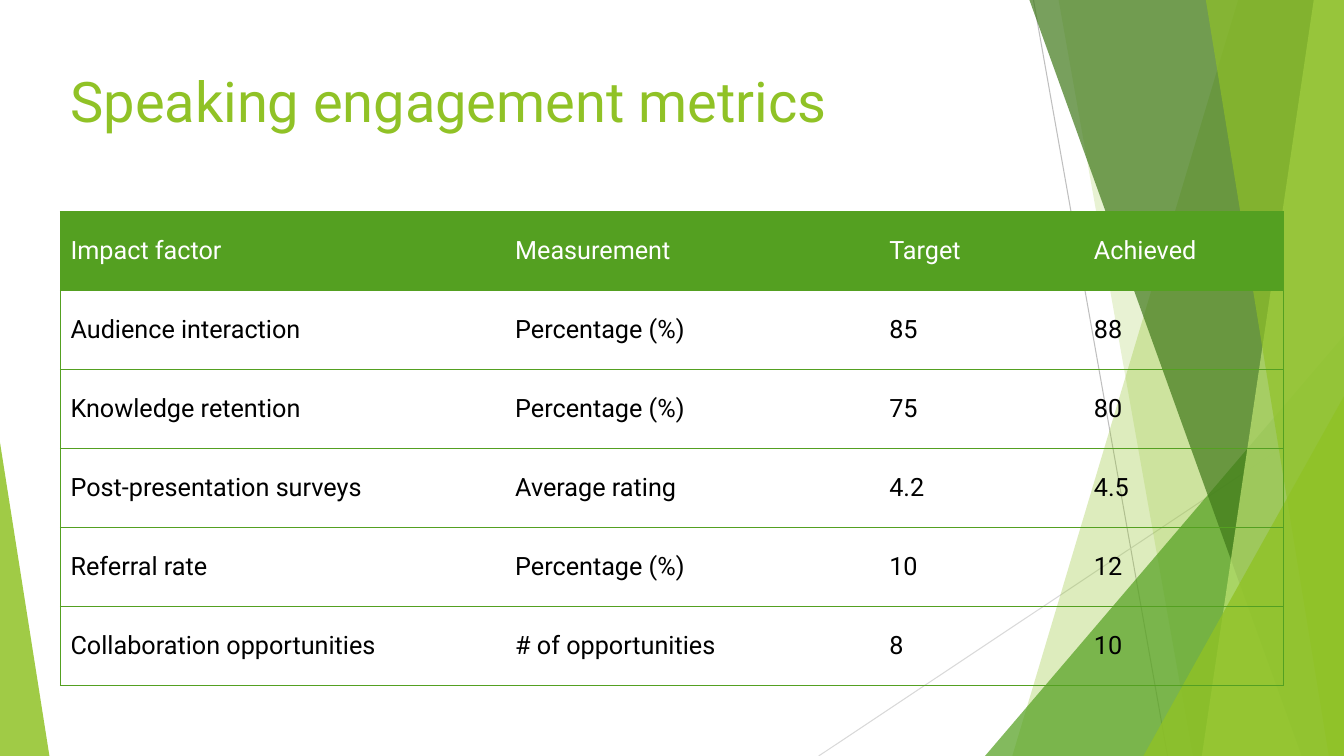
from lxml import etree
from pptx import Presentation
from pptx.dml.color import RGBColor
from pptx.enum.shapes import MSO_CONNECTOR, MSO_SHAPE
from pptx.enum.text import MSO_ANCHOR
from pptx.oxml.ns import qn
from pptx.util import Inches, Pt

STRAIGHT = MSO_CONNECTOR.STRAIGHT
TRIANGLE = MSO_SHAPE.ISOSCELES_TRIANGLE
TOP = MSO_ANCHOR.TOP
MIDDLE = MSO_ANCHOR.MIDDLE

LIME = RGBColor(0x90, 0xC2, 0x26)
PALE_LIME = RGBColor(0xC0, 0xE4, 0x74)
GREEN = RGBColor(0x54, 0xA0, 0x21)
DARK_GREEN = RGBColor(0x3F, 0x78, 0x19)
GRAY = RGBColor(0xBF, 0xBF, 0xBF)
LIGHT_GRAY = RGBColor(0xD9, 0xD9, 0xD9)
WHITE = RGBColor(0xFF, 0xFF, 0xFF)
BLACK = RGBColor(0, 0, 0)

FONT = "Roboto"
WIDTH, HEIGHT = 13.33, 7.5
COLUMN_WIDTHS = [4.41, 3.71, 2.03, 1.98]
ROW_HEIGHT = 4.7 / 6
METRICS = [
    ("Impact factor", "Measurement", "Target", "Achieved"),
    ("Audience interaction", "Percentage (%)", "85", "88"),
    ("Knowledge retention", "Percentage (%)", "75", "80"),
    ("Post-presentation surveys", "Average rating", "4.2", "4.5"),
    ("Referral rate", "Percentage (%)", "10", "12"),
    ("Collaboration opportunities", "# of opportunities", "8", "10"),
]


def write_text(tf, text, size=18, color=BLACK, anchor=MIDDLE):
    tf.word_wrap = True
    tf.vertical_anchor = anchor
    r = tf.paragraphs[0].add_run()
    r.text = text
    r.font.name = FONT
    r.font.size = Pt(size)
    r.font.bold = False
    r.font.color.rgb = color


def add_line(slide, x1, y1, x2, y2, color):
    line = slide.shapes.add_connector(
        STRAIGHT, Inches(x1), Inches(y1), Inches(x2), Inches(y2))
    line.line.color.rgb = color
    line.line.width = Pt(0.75)
    etree.SubElement(line._element.spPr, qn("a:effectLst"))


def paint(sp, color, opacity):
    sp.shadow.inherit = False
    sp.line.fill.background()
    sp.fill.solid()
    sp.fill.fore_color.rgb = color
    srgb = sp._element.spPr.find(qn("a:solidFill")).find(qn("a:srgbClr"))
    etree.SubElement(srgb, qn("a:alpha"), val=str(opacity * 1000))


def add_facet(slide, top_x, bottom_x, color, opacity):
    builder = slide.shapes.build_freeform(Inches(top_x), 0)
    corners = [(WIDTH, 0), (WIDTH, HEIGHT), (bottom_x, HEIGHT)]
    builder.add_line_segments([(Inches(x), Inches(y)) for x, y in corners])
    paint(builder.convert_to_shape(), color, opacity)


def add_triangle(slide, x, y, width, apex, color, opacity):
    sp = slide.shapes.add_shape(
        TRIANGLE, Inches(x), Inches(y), Inches(width), Inches(HEIGHT - y))
    sp.adjustments[0] = apex
    paint(sp, color, opacity)


def add_backdrop(slide):
    add_line(slide, 10.25, 0, 11.58, HEIGHT, GRAY)
    add_line(slide, WIDTH, 4.03, 8.12, HEIGHT, LIGHT_GRAY)
    add_facet(slide, 12.28, 10.04, LIME, 30)
    add_facet(slide, 10.5, 11.83, LIME, 20)
    add_triangle(slide, 9.77, 3.33, 3.56, 1, GREEN, 72)
    add_facet(slide, 10.21, 12.91, DARK_GREEN, 70)
    add_facet(slide, 13.03, 11.92, PALE_LIME, 70)
    add_facet(slide, 11.96, 13.18, LIME, 65)
    add_triangle(slide, 11.34, 3.93, 1.99, 1, LIME, 80)
    add_triangle(slide, 0, 4.39, 0.49, 0, LIME, 85)


def set_borders(cell, sides):
    tcPr = cell._tc.get_or_add_tcPr()
    for side in "LRTB":
        ln = etree.SubElement(tcPr, qn(f"a:ln{side}"), w=str(Pt(1)))
        if side in sides:
            fill = etree.SubElement(ln, qn("a:solidFill"))
            etree.SubElement(fill, qn("a:srgbClr"), val=str(GREEN))
        else:
            etree.SubElement(ln, qn("a:noFill"))


def add_metrics_table(slide):
    table = slide.shapes.add_table(
        len(METRICS), len(COLUMN_WIDTHS), Inches(0.6), Inches(2.1),
        Inches(sum(COLUMN_WIDTHS)), Inches(ROW_HEIGHT * len(METRICS))).table
    table.horz_banding = False
    for column, width in zip(table.columns, COLUMN_WIDTHS):
        column.width = Inches(width)
    last = len(COLUMN_WIDTHS) - 1
    for i, values in enumerate(METRICS):
        table.rows[i].height = Inches(ROW_HEIGHT)
        for j, value in enumerate(values):
            cell = table.cell(i, j)
            cell.vertical_anchor = MIDDLE
            set_borders(cell, "TB" + "L" * (j == 0) + "R" * (j == last))
            if i == 0:
                cell.fill.solid()
                cell.fill.fore_color.rgb = GREEN
            else:
                cell.fill.background()
            write_text(cell.text_frame, value, color=BLACK if i else WHITE)


def add_title(slide, text):
    box = slide.shapes.add_textbox(
        Inches(0.6), Inches(0.61), Inches(12.13), Inches(1.3))
    write_text(box.text_frame, text, size=40, color=LIME, anchor=TOP)


def main():
    prs = Presentation()
    prs.slide_width = Inches(WIDTH)
    prs.slide_height = Inches(HEIGHT)
    slide = prs.slides.add_slide(prs.slide_layouts[6])
    add_backdrop(slide)
    add_title(slide, "Speaking engagement metrics")
    add_metrics_table(slide)
    prs.save("out.pptx")


if __name__ == "__main__":
    main()
